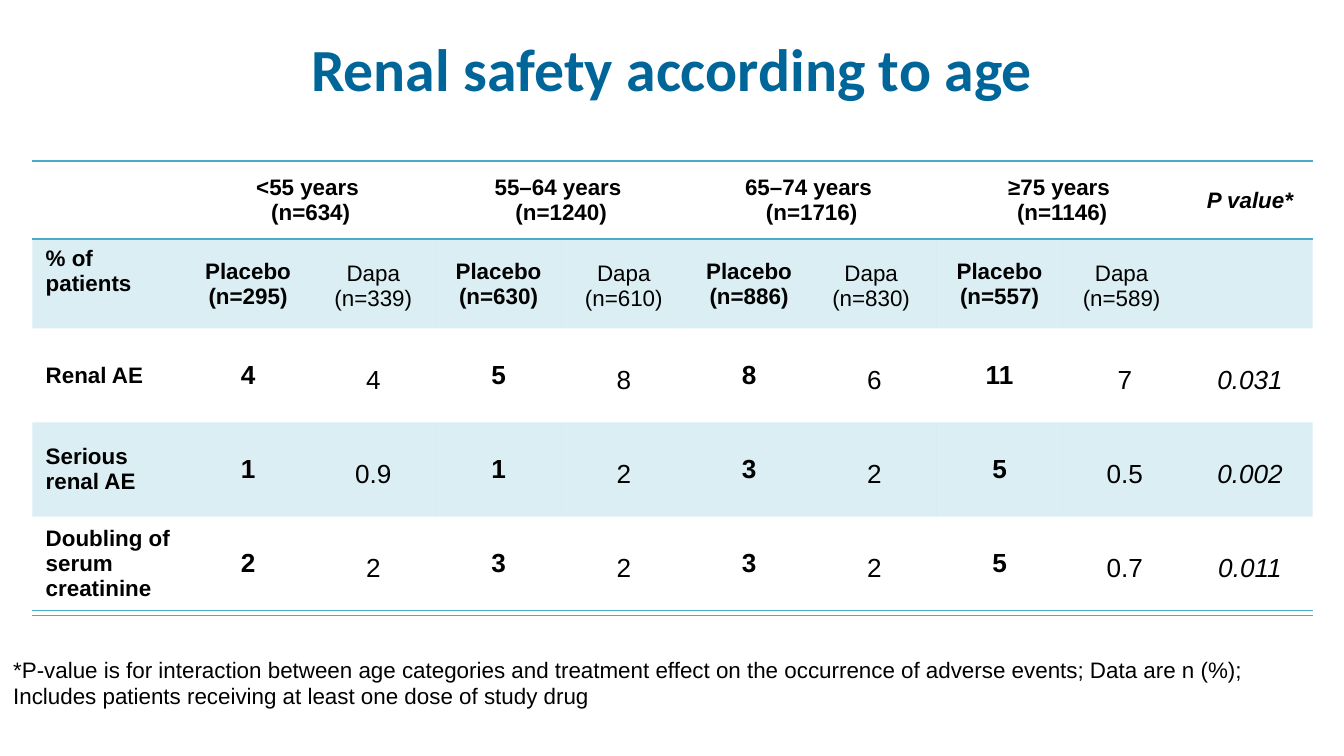
from dataclasses import dataclass

from lxml import etree
from pptx import Presentation
from pptx.dml.color import RGBColor
from pptx.enum.text import MSO_ANCHOR, MSO_AUTO_SIZE, PP_ALIGN
from pptx.oxml.ns import qn
from pptx.util import Inches, Pt

LEFT, CENTER = PP_ALIGN.LEFT, PP_ALIGN.CENTER
MIDDLE = MSO_ANCHOR.MIDDLE
GROW = MSO_AUTO_SIZE.SHAPE_TO_FIT_TEXT

W = 10
H = W * 9 / 16
TEAL, BLUE, BLACK = "4BACC6", "006699", "000000"
NO_STYLE = "{2D5ABB26-0587-4C30-8999-92F81FD0307C}"
COLS, ROWS, P_COL = 10, 5, 9
TABLE_W, TABLE_H = 9.53, 3.38
LABEL_W = 1.14
VALUE_W = (TABLE_W - LABEL_W) / (COLS - 1)
HEAD_H, BODY_H = 0.58, 0.7
BANDS = (1, 3)


@dataclass
class Style:
    size: int = 12
    font: str = "Arial"
    color: str = BLACK
    bold: bool = False
    italic: bool = False
    align: int = CENTER


@dataclass
class AgeGroup:
    heading: str
    placebo: list[str]
    dapa: list[str]


@dataclass
class Outcome:
    label: str
    p_value: str


GROUPS = [
    AgeGroup("<55 years \n(n=634)", ["Placebo (n=295)", "4", "1", "2"],
             ["Dapa\n (n=339) ", "4", "0.9", "2"]),
    AgeGroup("55–64 years \n(n=1240)", ["Placebo (n=630)", "5", "1", "3"],
             ["Dapa\n (n=610) ", "8", "2", "2"]),
    AgeGroup("65–74 years \n(n=1716)", ["Placebo (n=886)", "8", "3", "3"],
             ["Dapa \n(n=830) ", "6", "2", "2"]),
    AgeGroup("≥75 years \n(n=1146)", ["Placebo (n=557)", "11", "5", "5"],
             ["Dapa \n(n=589) ", "7", "0.5", "0.7"]),
]
OUTCOMES = [
    Outcome("Renal AE", "0.031"),
    Outcome("Serious renal AE", "0.002"),
    Outcome("Doubling of serum creatinine", "0.011"),
]


def rgb(color: str) -> RGBColor:
    return RGBColor.from_string(color)


def write(tf, text: str, style: Style) -> None:
    for i, line in enumerate(text.split("\n")):
        p = tf.add_paragraph() if i else tf.paragraphs[0]
        p.alignment = style.align
        r = p.add_run()
        r.text = line
        r.font.size, r.font.name = Pt(style.size), style.font
        r.font.bold, r.font.italic = style.bold, style.italic
        r.font.color.rgb = rgb(style.color)


def add_border(cell, side: str) -> None:
    ln = etree.Element(qn(f"a:ln{side}"), w=str(Pt(1)))
    fill = etree.SubElement(ln, qn("a:solidFill"))
    etree.SubElement(fill, qn("a:srgbClr"), val=TEAL)
    cell._tc.get_or_add_tcPr().insert(0, ln)


def tint(cell) -> None:
    cell.fill.solid()
    cell.fill.fore_color.rgb = rgb(TEAL)
    clr = cell._tc.tcPr.find(".//" + qn("a:srgbClr"))
    etree.SubElement(clr, qn("a:alpha"), val="20000")


def add_grid(s, row_heights: list[float], banded: bool):
    frame = s.shapes.add_table(ROWS, COLS, Inches(0.24), Inches(1.2),
                               Inches(TABLE_W), Inches(TABLE_H))
    table = frame.table
    table.first_row = table.horz_banding = False
    table._tbl.tblPr.find(qn("a:tableStyleId")).text = NO_STYLE
    for c, col in enumerate(table.columns):
        col.width = Inches(VALUE_W if c else LABEL_W)
    for r, row in enumerate(table.rows):
        row.height = Inches(row_heights[r])
        for cell in row.cells:
            cell.vertical_anchor = MIDDLE
            if banded and r in BANDS:
                tint(cell)
            else:
                cell.fill.background()
            if r in (0, ROWS - 1):
                add_border(cell, "B")
            if r == 0:
                add_border(cell, "T")
    for c in range(1, P_COL, 2):
        table.cell(0, c).merge(table.cell(0, c + 1))
    frame.height = Inches(TABLE_H)
    return table


def fill_column(table, col: int, values: list[str], bold: bool) -> None:
    for r, value in enumerate(values, 1):
        style = Style(size=12 if r == 1 else 14, bold=bold)
        write(table.cell(r, col).text_frame, value, style)


def add_placebo_table(s) -> None:
    table = add_grid(s, [HEAD_H, 0.47] + [BODY_H] * 3, banded=True)
    for c, group in zip(range(1, P_COL, 2), GROUPS):
        write(table.cell(0, c).text_frame, group.heading, Style(bold=True))
        fill_column(table, c, group.placebo, bold=True)
    write(table.cell(0, P_COL).text_frame, "P value*", Style(bold=True, italic=True))
    labels = ["% of patients"] + [outcome.label for outcome in OUTCOMES]
    for r, label in enumerate(labels, 1):
        write(table.cell(r, 0).text_frame, label, Style(bold=True, align=LEFT))
    table.cell(1, 0).margin_bottom = Inches(0.24)


def add_dapa_table(s) -> None:
    table = add_grid(s, [HEAD_H] + [BODY_H] * 4, banded=False)
    for c, group in zip(range(2, P_COL, 2), GROUPS):
        fill_column(table, c, group.dapa, bold=False)
    for r, outcome in enumerate(OUTCOMES, 2):
        write(table.cell(r, P_COL).text_frame, outcome.p_value, Style(14, italic=True))


def add_title(s) -> None:
    sp = s.shapes.title
    sp.left, sp.top, sp.width, sp.height = 0, Inches(0.05), Inches(W), Inches(0.91)
    sp.text_frame.vertical_anchor = MIDDLE
    write(sp.text_frame, "Renal safety according to age",
          Style(32, "Calibri", BLUE, bold=True))


def add_footnote(s) -> None:
    sp = s.shapes.add_textbox(0, Inches(4.83), Inches(W), Inches(0.5))
    tf = sp.text_frame
    tf.word_wrap, tf.auto_size = True, GROW
    write(tf, "*P-value is for interaction between age categories and treatment "
              "effect on the occurrence of adverse events; Data are n (%); "
              "Includes patients receiving at least one dose of study drug",
          Style(align=LEFT))


def main() -> None:
    prs = Presentation()
    prs.slide_width, prs.slide_height = Inches(W), Inches(H)
    s = prs.slides.add_slide(prs.slide_layouts[5])
    add_title(s)
    add_placebo_table(s)
    add_footnote(s)
    add_dapa_table(s)
    prs.save("out.pptx")


if __name__ == "__main__":
    main()
